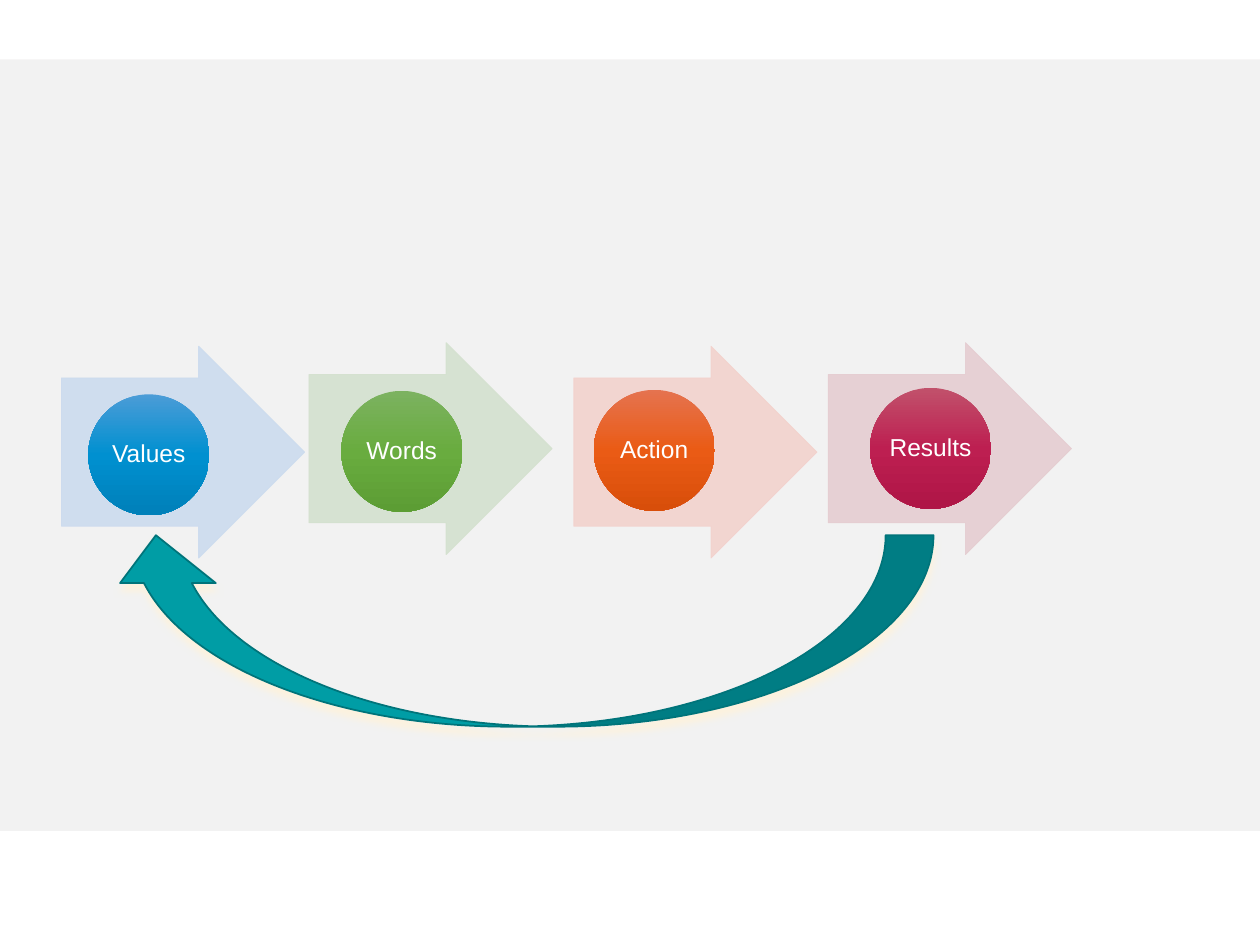
from copy import deepcopy

from pptx import Presentation
from pptx.dml.color import RGBColor
from pptx.enum.shapes import MSO_SHAPE as Kind
from pptx.enum.text import MSO_ANCHOR as Anchor, PP_ALIGN as Align
from pptx.oxml import parse_xml
from pptx.oxml.ns import nsdecls, qn
from pptx.util import Cm, Pt

WHITE = RGBColor(0xFF, 0xFF, 0xFF)
GREY = RGBColor(0xE7, 0xE6, 0xE6)
TEAL = RGBColor(0x00, 0x9D, 0xA5)
DARK_TEAL = RGBColor(0x00, 0x74, 0x7A)
PALE_BLUE = RGBColor(0xCC, 0xDB, 0xEE)
PALE_GREEN = RGBColor(0xD4, 0xE1, 0xCF)
PALE_RED = RGBColor(0xF3, 0xD2, 0xCD)
PALE_PINK = RGBColor(0xE5, 0xCD, 0xD1)
BLUES = [RGBColor(0x4B, 0x9C, 0xD7), RGBColor(0x00, 0x90, 0xD0), RGBColor(0x00, 0x80, 0xB9)]
GREENS = [RGBColor(0x7C, 0xB2, 0x60), RGBColor(0x69, 0xAC, 0x3F), RGBColor(0x5C, 0x9D, 0x34)]
REDS = [RGBColor(0xE5, 0x73, 0x4F), RGBColor(0xEA, 0x5B, 0x15), RGBColor(0xD8, 0x4E, 0x0A)]
PINKS = [RGBColor(0xC1, 0x51, 0x6B), RGBColor(0xBD, 0x1F, 0x51), RGBColor(0xAF, 0x15, 0x46)]

deck = Presentation()
deck.slide_width, deck.slide_height = Cm(25.4), Cm(19.05)
slide = deck.slides.add_slide(deck.slide_layouts[6])


def add(kind, left, top, width, height):
    """Add a shape without shadow, placed in centimetres."""
    shape = slide.shapes.add_shape(kind, Cm(left), Cm(top), Cm(width), Cm(height))
    shape.shadow.inherit = False
    return shape


def tint(shape, color, percent):
    """Fill the shape, and make all its plain colours partly opaque."""
    shape.fill.solid()
    shape.fill.fore_color.rgb = color
    for node in shape._element.spPr.iter(qn("a:srgbClr")):
        node.append(parse_xml(f'<a:alpha {nsdecls("a")} val="{percent * 1000}"/>'))


band = add(Kind.RECTANGLE, 0, 1.2, 25.4, 15.55)
band.line.fill.background()
tint(band, GREY, 50)

# Label, arrow left and top, circle left and top, arrow colour, circle colours
steps = [
    ("Values", 1.24, 6.98, 1.78, 7.95, PALE_BLUE, BLUES),
    ("Words", 6.23, 6.91, 6.88, 7.88, PALE_GREEN, GREENS),
    ("Action", 11.57, 6.98, 11.97, 7.86, PALE_RED, REDS),
    ("Results", 16.7, 6.91, 17.54, 7.82, PALE_PINK, PINKS),
]
for label, left, top, disc_left, disc_top, pale, shades in steps:
    arrow = add(Kind.RIGHT_ARROW, left, top, 4.9, 4.27)
    arrow.adjustments[0] = 0.7
    arrow.line.color.rgb = pale
    arrow.line.width = Pt(0.5)
    tint(arrow, pale, 90)

    disc = add(Kind.OVAL, disc_left, disc_top, 2.44, 2.44)
    disc.line.fill.background()
    disc.fill.gradient()
    disc.fill.gradient_angle = 270
    stops = disc._element.spPr.find(".//" + qn("a:gsLst"))
    stops.insert(1, deepcopy(stops[0]))
    for stop, place, shade in zip(disc.fill.gradient_stops, (0, 0.5, 1), shades):
        stop.position = place
        stop.color.rgb = shade

    frame = disc.text_frame
    frame.text = label
    frame.word_wrap = True
    frame.vertical_anchor = Anchor.MIDDLE
    frame.margin_left = frame.margin_right = Cm(0.03)
    frame.margin_top = frame.margin_bottom = Cm(0.03)
    para = frame.paragraphs[0]
    para.alignment = Align.CENTER
    para.line_spacing = 0.9
    font = para.runs[0].font
    font.name, font.size = "Arial", Pt(14)
    font.color.rgb = WHITE

# Feedback arrow from the results to the values
loop = add(Kind.CURVED_UP_ARROW, 2.18, 10.79, 16.64, 3.86)
loop.fill.solid()
loop.fill.fore_color.rgb = TEAL
loop.line.color.rgb = DARK_TEAL
loop.line.width = Pt(1)
props = loop._element.spPr
props.find(qn("a:xfrm")).set("flipH", "1")
props.find(qn("a:effectLst")).append(parse_xml(
    f'<a:outerShdw {nsdecls("a")} blurRad="{Pt(4)}" dist="{Pt(4)}" dir="5400000" '
    'rotWithShape="0"><a:srgbClr val="FCF2DF"/></a:outerShdw>'))

deck.save("out.pptx")
